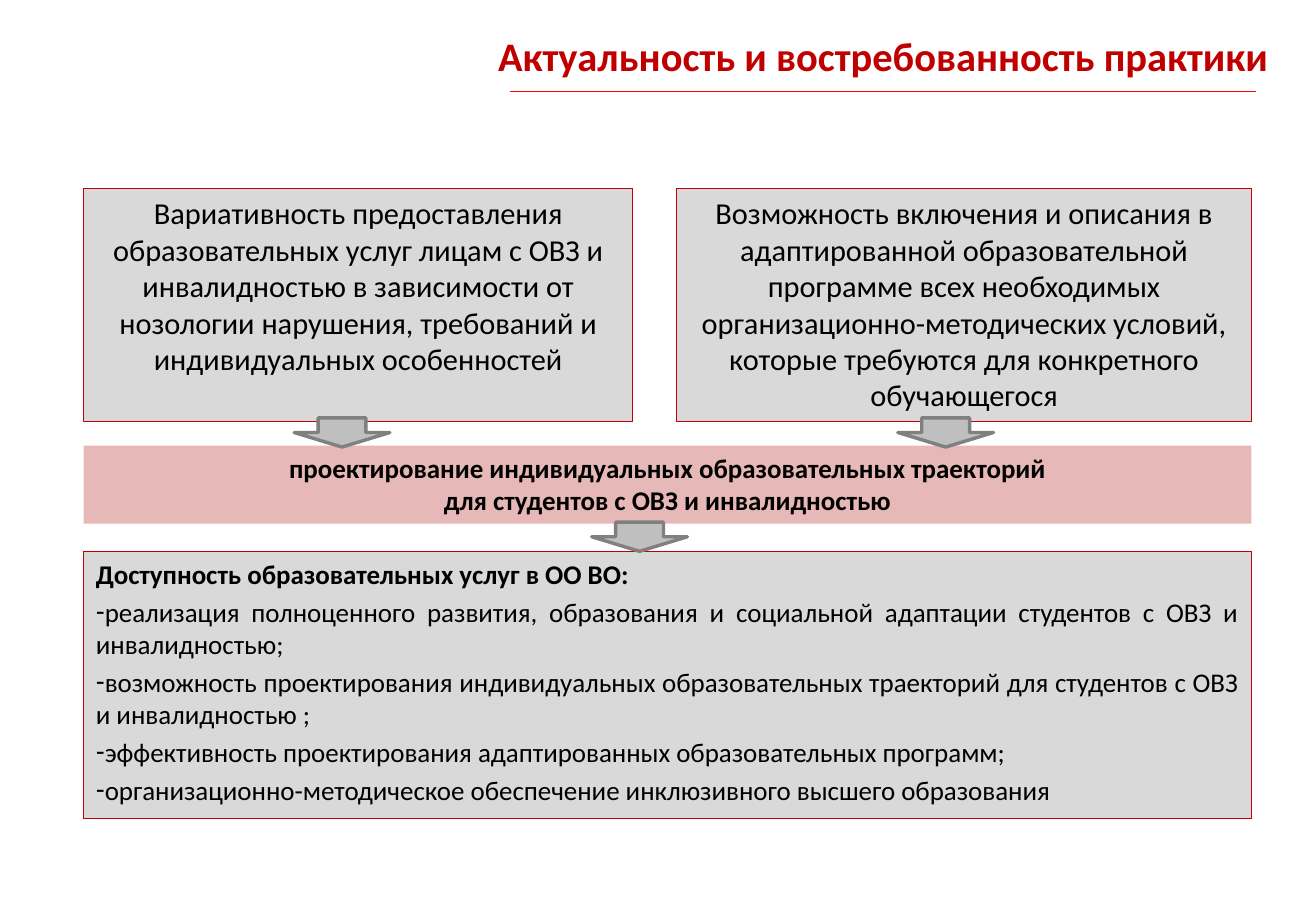
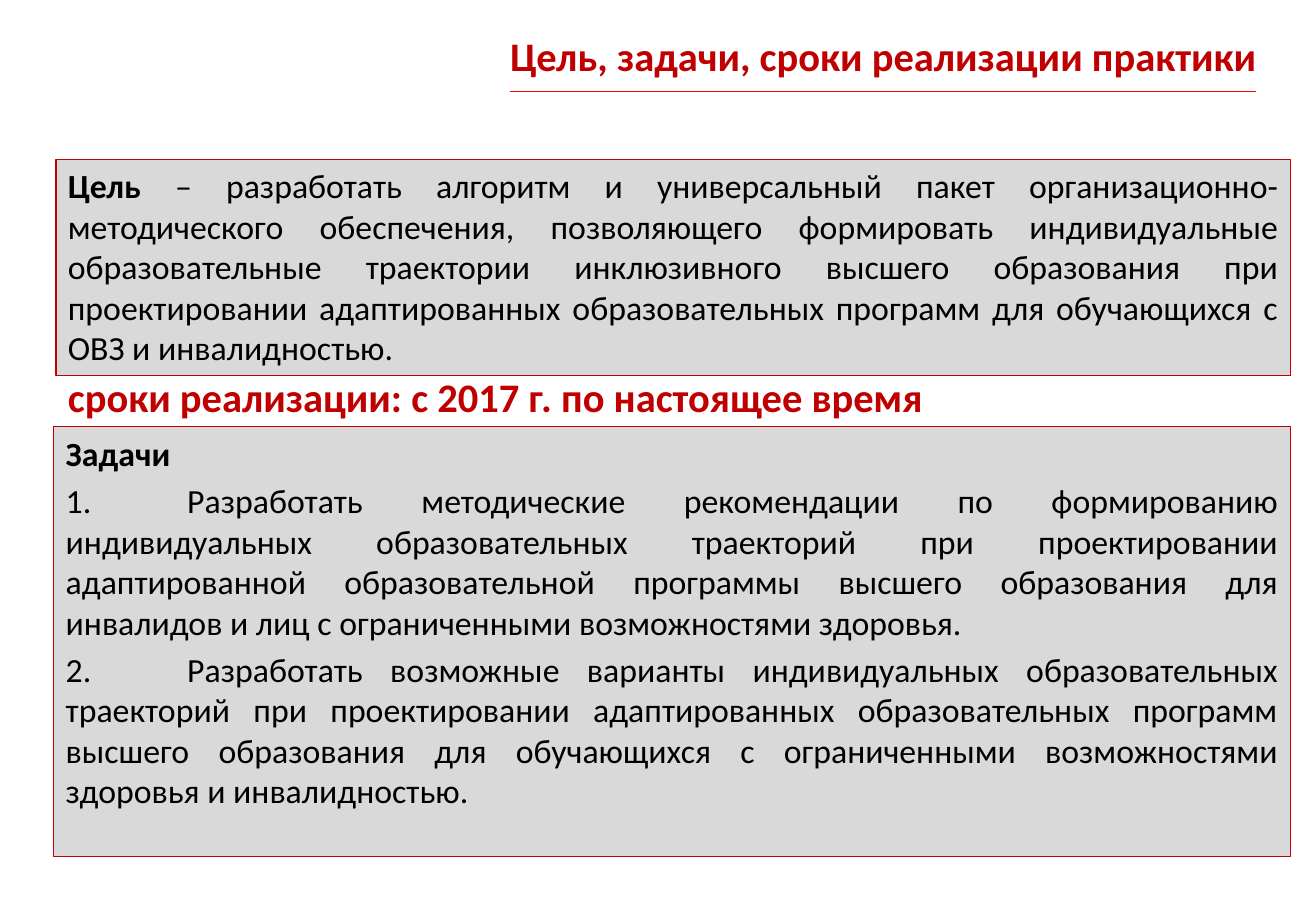
from dataclasses import dataclass

from lxml.etree import SubElement
from pptx import Presentation
from pptx.dml.color import RGBColor
from pptx.enum.shapes import MSO_CONNECTOR, MSO_SHAPE
from pptx.enum.text import MSO_ANCHOR, MSO_AUTO_SIZE, PP_ALIGN
from pptx.oxml.ns import qn
from pptx.util import Cm, Pt


@dataclass(frozen=True)
class Theme:
    font: str = "Calibri"
    accent: str = "C00000"
    rule: str = "FF0000"
    ink: str = "000000"
    panel: str = "D9D9D9"
    band: str = "E6B9B8"
    arrow: str = "BFBFBF"
    arrow_edge: str = "808080"
    heading: int = 24
    large: int = 20
    medium: int = 18
    small: int = 16


THEME = Theme()


def rgb(color):
    return RGBColor.from_string(color)


def write(frame, text, *, size, lead="", color=THEME.ink, bold=False,
          align=PP_ALIGN.JUSTIFY, bullet=None, number=None):
    """Append one paragraph; lead is a bold opening, bullet or number its list mark."""
    first = not frame.paragraphs[0].runs
    paragraph = frame.paragraphs[0] if first else frame.add_paragraph()
    paragraph.alignment = align
    paragraph.space_before = Pt(0 if first else size * 0.2)
    props = paragraph._p.get_or_add_pPr()
    props.set("marL", "0")
    props.set("indent", "0")
    if bullet:
        SubElement(props, qn("a:buChar"), char=bullet)
    elif number:
        SubElement(props, qn("a:buAutoNum"), type="arabicPeriod", startAt=str(number))
        tabs = SubElement(props, qn("a:tabLst"))
        SubElement(tabs, qn("a:tab"), pos=str(Cm(2.54)), algn="l")
        text = "\t" + text
    else:
        SubElement(props, qn("a:buNone"))
    for part, strong in ((lead, True), (text, bold)):
        if part:
            run = paragraph.add_run()
            run.text = part
            run.font.name = THEME.font
            run.font.size = Pt(size)
            run.font.bold = strong
            run.font.color.rgb = rgb(color)


class Deck:
    def __init__(self, theme):
        self.theme = theme
        self.file = Presentation()
        self.file.slide_width, self.file.slide_height = Cm(27.51), Cm(19.05)
        self.slide = None

    def place(self, shape, box):
        shape.left, shape.top, shape.width, shape.height = map(Cm, box)

    def prepare(self, frame, anchor=MSO_ANCHOR.TOP):
        frame.word_wrap = True
        frame.auto_size = MSO_AUTO_SIZE.NONE
        frame.vertical_anchor = anchor
        return frame

    def paint(self, shape, fill, line=None, width=0.75):
        shape.fill.solid()
        shape.fill.fore_color.rgb = rgb(fill)
        if line:
            shape.line.color.rgb = rgb(line)
            shape.line.width = Pt(width)
        else:
            shape.line.fill.background()

    def new_slide(self, heading):
        """Start a slide with its title and the rule under it."""
        self.slide = self.file.slides.add_slide(self.file.slide_layouts[1])
        title = self.slide.shapes.title
        self.place(title, (9.42, 0, 18.09, 2.3))
        write(self.prepare(title.text_frame, MSO_ANCHOR.MIDDLE), heading,
              size=self.theme.heading, color=self.theme.accent, bold=True,
              align=PP_ALIGN.CENTER)
        rule = self.slide.shapes.add_connector(
            MSO_CONNECTOR.STRAIGHT, Cm(10.67), Cm(1.91), Cm(26.25), Cm(1.91))
        rule.line.color.rgb = rgb(self.theme.rule)
        rule.line.width = Pt(0.5)
        SubElement(rule._element.spPr, qn("a:effectLst"))

    def body(self, box):
        """Return the text frame of the body placeholder, set as a panel."""
        content = self.slide.placeholders[1]
        self.place(content, box)
        self.paint(content, self.theme.panel, self.theme.accent)
        return self.prepare(content.text_frame)

    def shape(self, kind, box, fill, line=None, width=0.75):
        drawn = self.slide.shapes.add_shape(kind, *map(Cm, box))
        drawn.shadow.inherit = False
        self.paint(drawn, fill, line, width)
        return self.prepare(drawn.text_frame)

    def panel(self, box):
        return self.shape(MSO_SHAPE.RECTANGLE, box, self.theme.panel, self.theme.accent)

    def band(self, box):
        return self.shape(MSO_SHAPE.RECTANGLE, box, self.theme.band)

    def arrow(self, left, top):
        self.shape(MSO_SHAPE.DOWN_ARROW, (left, top, 2, 0.61),
                   self.theme.arrow, self.theme.arrow_edge, 2)

    def label(self, box):
        return self.prepare(self.slide.shapes.add_textbox(*map(Cm, box)).text_frame)


def relevance_slide(deck):
    deck.new_slide("Актуальность и востребованность практики")
    left, width = 1.75, 24.41

    access = deck.body((left, 11.53, width, 5.59))
    write(access, "Доступность образовательных услуг в ОО ВО:", size=THEME.small, bold=True)
    for benefit in (
        "реализация полноценного развития, образования и социальной адаптации "
        "студентов с ОВЗ и инвалидностью;",
        "возможность проектирования индивидуальных образовательных траекторий "
        "для студентов с ОВЗ и инвалидностью ;",
        "эффективность проектирования адаптированных образовательных программ;",
        "организационно-методическое обеспечение инклюзивного высшего образования",
    ):
        write(access, benefit, size=THEME.small, bullet="-")

    for reason_left, reason_width, reason in (
        (left, 11.48,
         "Вариативность предоставления образовательных услуг лицам с ОВЗ и "
         "инвалидностью в зависимости от нозологии нарушения, требований и "
         "индивидуальных особенностей"),
        (14.15, 12.01,
         "Возможность включения и описания в адаптированной образовательной "
         "программе всех необходимых организационно-методических условий, "
         "которые требуются для конкретного обучающегося"),
    ):
        write(deck.panel((reason_left, 3.94, reason_width, 4.88)), reason,
              size=THEME.medium, align=PP_ALIGN.CENTER)

    design = deck.band((left, 9.32, width, 1.63))
    design_format = dict(size=THEME.small, bold=True, align=PP_ALIGN.CENTER)
    write(design, "проектирование индивидуальных образовательных траекторий", **design_format)
    write(design, "для студентов с ОВЗ и инвалидностью", **design_format)
    design.paragraphs[1].space_before = Pt(0)

    for arrow_left, arrow_top in ((6.15, 8.74), (12.37, 10.92), (18.77, 8.74)):
        deck.arrow(arrow_left, arrow_top)


def goals_slide(deck):
    deck.new_slide("Цель, задачи, сроки реализации практики")

    tasks = deck.body((1.12, 8.92, 25.86, 8.99))
    write(tasks, "Задачи", size=THEME.large, bold=True)
    for number, task in enumerate((
        "Разработать методические рекомендации по формированию индивидуальных "
        "образовательных траекторий при проектировании адаптированной "
        "образовательной программы высшего образования для инвалидов и лиц с "
        "ограниченными возможностями здоровья.",
        "Разработать возможные варианты индивидуальных образовательных "
        "траекторий при проектировании адаптированных образовательных программ "
        "высшего образования для обучающихся с ограниченными возможностями "
        "здоровья и инвалидностью.",
    ), start=1):
        write(tasks, task, size=THEME.large, number=number)

    write(deck.panel((1.17, 3.33, 25.81, 4.52)),
          " – разработать алгоритм и универсальный пакет "
          "организационно-методического обеспечения, позволяющего формировать "
          "индивидуальные образовательные траектории инклюзивного высшего "
          "образования при проектировании адаптированных образовательных "
          "программ для обучающихся с ОВЗ и инвалидностью.",
          lead="Цель", size=THEME.large)

    write(deck.label((1.17, 7.65, 25.81, 1.27)),
          "сроки реализации: с 2017 г. по настоящее время",
          size=THEME.heading, color=THEME.accent, bold=True, align=PP_ALIGN.LEFT)


def main():
    deck = Deck(THEME)
    relevance_slide(deck)
    goals_slide(deck)
    deck.file.save("out.pptx")


if __name__ == "__main__":
    main()
